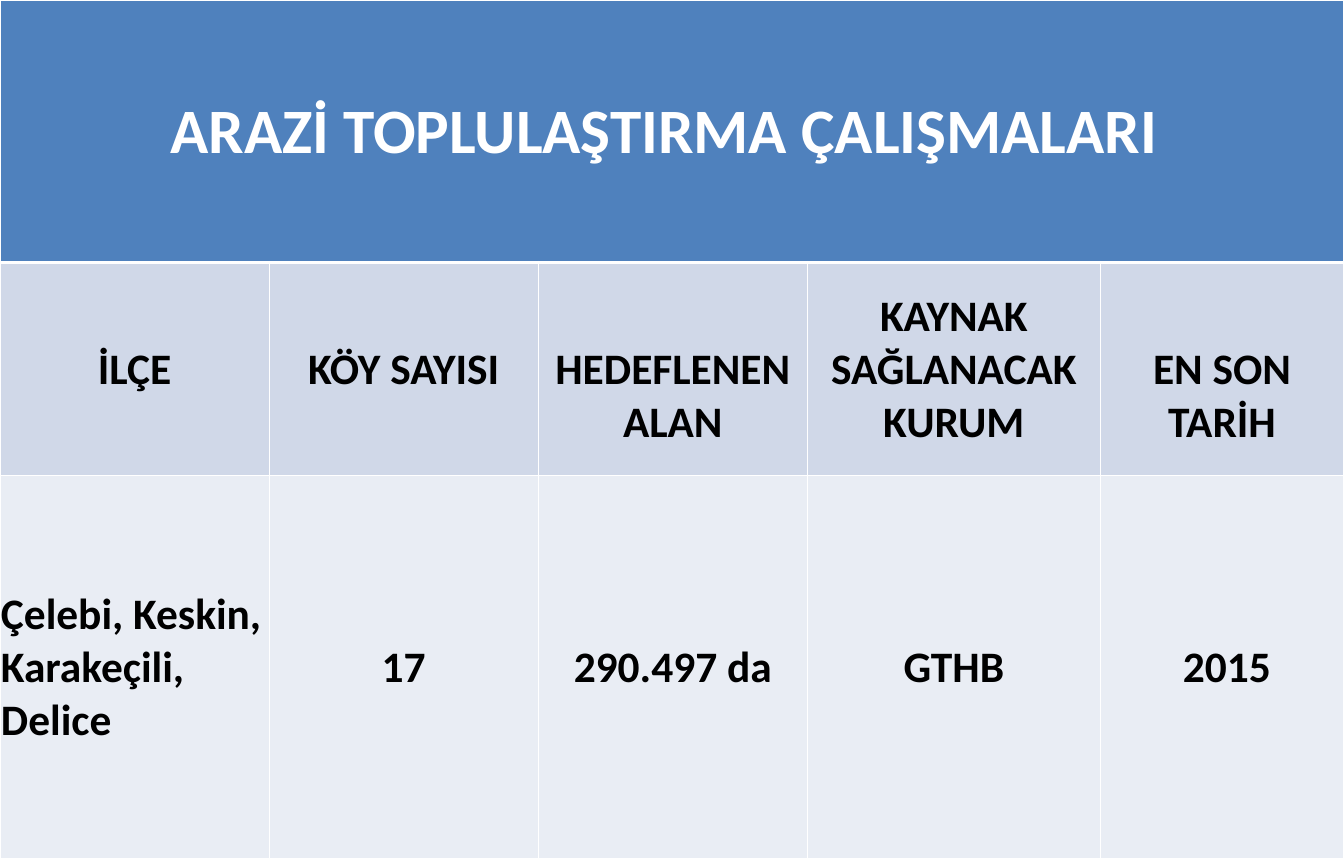
import dataclasses

import pptx
import pptx.dml.color
import pptx.enum.text
import pptx.oxml
import pptx.oxml.ns
import pptx.util
from pptx.util import Inches


@dataclasses.dataclass(frozen=True)
class Theme:
    """Colours, font and type sizes of the slide."""
    font: str = "Calibri"
    background: str = "EEECE1"
    banner: str = "4F81BD"
    heading: str = "D0D8E8"
    body: str = "E9EDF4"
    border: str = "FFFFFF"
    light: str = "FFFFFF"
    dark: str = "000000"
    title_size: int = 48
    text_size: int = 33
    thin: int = 1
    thick: int = 3


THEME = Theme()
ALIGN = pptx.enum.text.PP_ALIGN
SLIDE_WIDTH, SLIDE_HEIGHT = 14.18, 9.06
COLUMNS = (2.84, 2.84, 2.84, 3.09, 2.57)
ROWS = (2.77, 2.25, 4.04)
INSET = 0.01
LINE_DROP = 0.57
TITLE = "ARAZİ TOPLULAŞTIRMA ÇALIŞMALARI"
HEADINGS = (
    ("İLÇE", {}),
    ("KÖY SAYISI", {}),
    ("HEDEFLENEN ALAN", {"top": LINE_DROP}),
    ("KAYNAK SAĞLANACAK KURUM", {}),
    ("EN SON TARİH", {"top": LINE_DROP}),
)
VALUES = (
    ("Çelebi, Keskin, Karakeçili, Delice", {"align": ALIGN.LEFT}),
    ("17", {}),
    ("290.497 da", {}),
    ("GTHB", {}),
    ("2015", {"left": 0.11}),
)


def color(value):
    """Return the colour object for a hex value."""
    return pptx.dml.color.RGBColor.from_string(value)


def write_text(cell, text, size=THEME.text_size, ink=THEME.dark,
               align=ALIGN.CENTER, left=INSET, top=INSET, right=INSET):
    """Write bold text in a cell with the given format and insets."""
    cell.margin_left, cell.margin_top = Inches(left), Inches(top)
    cell.margin_right, cell.margin_bottom = Inches(right), 0
    cell.vertical_anchor = pptx.enum.text.MSO_ANCHOR.MIDDLE
    para = cell.text_frame.paragraphs[0]
    para.alignment = align
    span = para.add_run()
    span.text = text
    span.font.name = THEME.font
    span.font.size = pptx.util.Pt(size)
    span.font.bold = True
    span.font.color.rgb = color(ink)


def style_cell(cell, fill, top=THEME.thin, bottom=THEME.thin):
    """Give a cell its borders and fill."""
    properties = cell._tc.get_or_add_tcPr()
    widths = {"lnL": THEME.thin, "lnR": THEME.thin, "lnT": top, "lnB": bottom}
    for side, width in widths.items():
        properties.append(pptx.oxml.parse_xml(
            f'<a:{side} {pptx.oxml.ns.nsdecls("a")} w="{pptx.util.Pt(width)}">'
            f'<a:solidFill><a:srgbClr val="{THEME.border}"/></a:solidFill>'
            f'</a:{side}>'))
    cell.fill.solid()
    cell.fill.fore_color.rgb = color(fill)


def add_grid(page):
    """Add the table with its column widths, row heights and cell styles."""
    grid = page.shapes.add_table(len(ROWS), len(COLUMNS), 0, 0,
                                 Inches(SLIDE_WIDTH), Inches(SLIDE_HEIGHT)).table
    for column, width in zip(grid.columns, COLUMNS):
        column.width = Inches(width)
    styles = (
        (THEME.banner, THEME.thin, THEME.thick),
        (THEME.heading, THEME.thick, THEME.thin),
        (THEME.body, THEME.thin, THEME.thin),
    )
    for row, height, style in zip(grid.rows, ROWS, styles):
        row.height = Inches(height)
        for cell in row.cells:
            style_cell(cell, *style)
    return grid


def main():
    """Build the land consolidation slide and save it."""
    deck = pptx.Presentation()
    deck.slide_width, deck.slide_height = Inches(SLIDE_WIDTH), Inches(SLIDE_HEIGHT)
    page = deck.slides.add_slide(deck.slide_layouts[6])
    page.background.fill.solid()
    page.background.fill.fore_color.rgb = color(THEME.background)

    grid = add_grid(page)
    banner = grid.cell(0, 0)
    banner.merge(grid.cell(0, len(COLUMNS) - 1))
    write_text(banner, TITLE, size=THEME.title_size, ink=THEME.light, right=0.17)
    for row, entries in enumerate((HEADINGS, VALUES), start=1):
        for column, (text, layout) in enumerate(entries):
            write_text(grid.cell(row, column), text, **layout)
    deck.save("out.pptx")


if __name__ == "__main__":
    main()
